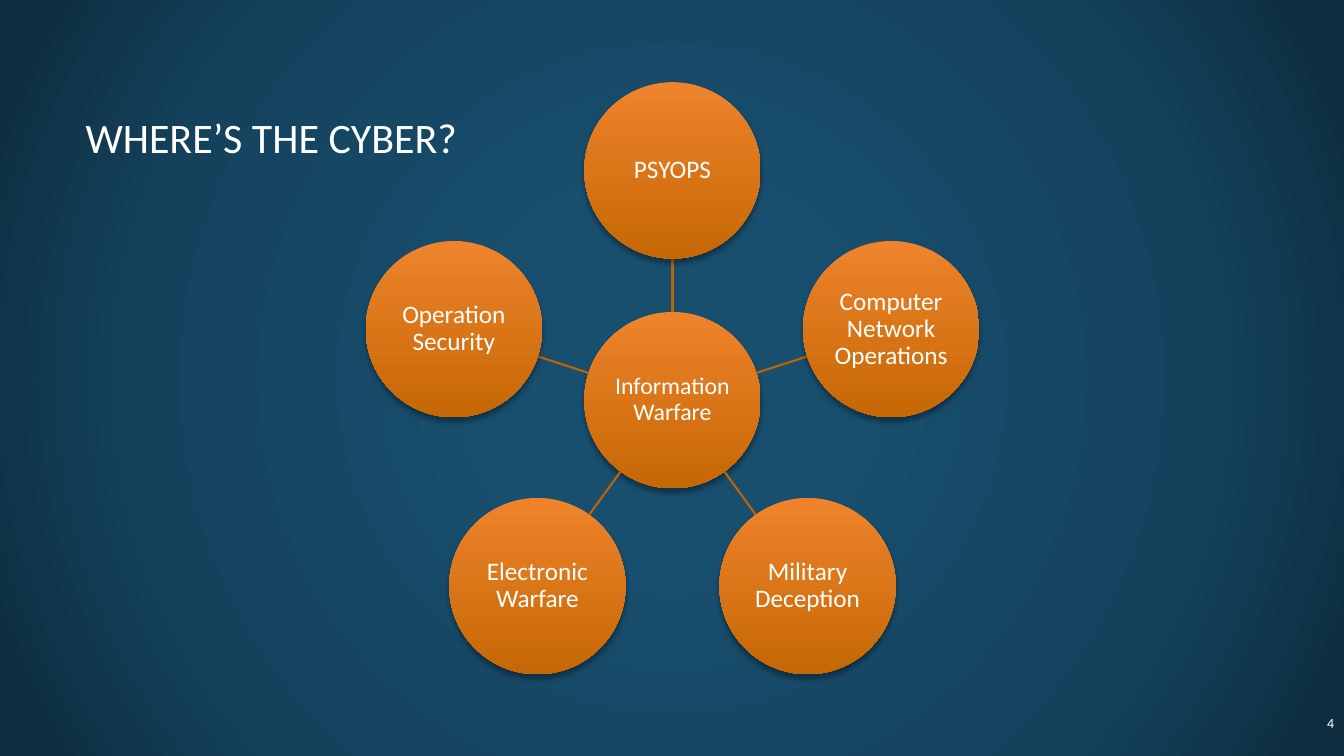
import math

import lxml.etree
import pptx
import pptx.dml.color
import pptx.enum.shapes
import pptx.enum.text
import pptx.oxml
import pptx.oxml.ns
import pptx.util
from pptx.dml.color import RGBColor
from pptx.enum.text import PP_ALIGN
from pptx.util import Inches

WHITE = RGBColor(0xFF, 0xFF, 0xFF)
BLACK = RGBColor(0x00, 0x00, 0x00)
ORANGE_LIGHT = RGBColor(0xEE, 0x83, 0x2B)
ORANGE_DARK = RGBColor(0xC6, 0x68, 0x05)
SPOKE_ORANGE = RGBColor(0xBE, 0x64, 0x04)
BLUE = RGBColor(0x18, 0x4E, 0x6E)
BLUE_MIDDLE = RGBColor(0x14, 0x42, 0x5D)
BLUE_DARK = RGBColor(0x0D, 0x2C, 0x3E)

FONT = "Calibri"
BACKGROUND_STOPS = [(0, BLUE), (23, BLUE), (69, BLUE_MIDDLE), (97, BLUE_DARK), (100, BLUE_DARK)]

HUB = "Information Warfare"
# Clockwise from the top
TOPICS = [
    "PSYOPS",
    "Computer Network Operations",
    "Military Deception",
    "Electronic Warfare",
    "Operation Security",
]
CENTER_X, CENTER_Y = 6.67, 3.97
ORBIT = 2.28
RADIUS = 0.875


def set_background(slide):
    """Fill the slide with a circular gradient spreading from its middle."""
    slide.background.fill.solid()
    solid_fill = slide.element.find(".//" + pptx.oxml.ns.qn("a:solidFill"))
    stops = "".join(
        f'<a:gs pos="{position * 1000}"><a:srgbClr val="{color}"/></a:gs>'
        for position, color in BACKGROUND_STOPS
    )
    gradient = pptx.oxml.parse_xml(
        f'<a:gradFill {pptx.oxml.ns.nsdecls("a")} rotWithShape="1"><a:gsLst>{stops}</a:gsLst>'
        '<a:path path="circle"><a:fillToRect l="50000" t="50000" r="50000" b="50000"/></a:path>'
        "</a:gradFill>"
    )
    solid_fill.getparent().replace(solid_fill, gradient)


def write_text(shape, text, size, align=PP_ALIGN.LEFT, margins=(0.1, 0.05), line_spacing=None):
    """Write one paragraph; margins are (horizontal, vertical) in inches."""
    frame = shape.text_frame
    frame.word_wrap = True
    frame.vertical_anchor = pptx.enum.text.MSO_ANCHOR.MIDDLE
    frame.margin_left = frame.margin_right = Inches(margins[0])
    frame.margin_top = frame.margin_bottom = Inches(margins[1])
    paragraph = frame.paragraphs[0]
    paragraph.text = text
    paragraph.alignment = align
    paragraph.line_spacing = line_spacing
    paragraph.font.name = FONT
    paragraph.font.size = pptx.util.Pt(size)
    paragraph.font.color.rgb = WHITE


def add_text(slide, left, top, width, height, text, **text_format):
    box = slide.shapes.add_textbox(Inches(left), Inches(top), Inches(width), Inches(height))
    write_text(box, text, **text_format)


def add_shadow(shape):
    shape.shadow.inherit = False
    effects = shape.element.spPr.find(pptx.oxml.ns.qn("a:effectLst"))
    effects.append(pptx.oxml.parse_xml(
        f'<a:outerShdw {pptx.oxml.ns.nsdecls("a")} blurRad="{pptx.util.Pt(4)}" '
        f'dist="{pptx.util.Pt(3)}" dir="5400000" rotWithShape="0">'
        f'<a:srgbClr val="{BLACK}"><a:alpha val="35000"/></a:srgbClr></a:outerShdw>'
    ))


def add_circle(slide, center, text, size):
    x, y = center
    circle = slide.shapes.add_shape(
        pptx.enum.shapes.MSO_SHAPE.OVAL,
        Inches(x - RADIUS), Inches(y - RADIUS), Inches(2 * RADIUS), Inches(2 * RADIUS),
    )
    circle.fill.gradient()
    circle.fill.gradient_angle = 270
    for stop, color, position in zip(
        circle.fill.gradient_stops, (ORANGE_LIGHT, ORANGE_DARK), (0, 1)
    ):
        stop.color.rgb = color
        stop.position = position
    circle.line.fill.background()
    add_shadow(circle)
    write_text(circle, text, size, PP_ALIGN.CENTER, margins=(0.01, 0.01), line_spacing=0.9)


def add_spoke(slide, start, end):
    spoke = slide.shapes.add_connector(
        pptx.enum.shapes.MSO_CONNECTOR.STRAIGHT, *(Inches(value) for value in (*start, *end))
    )
    spoke.line.color.rgb = SPOKE_ORANGE
    spoke.line.width = pptx.util.Pt(1.5)
    lxml.etree.SubElement(spoke.element.spPr, pptx.oxml.ns.qn("a:effectLst"))


def point_at(angle, distance):
    """Point at a clockwise angle from the top, measured from the hub's centre."""
    return CENTER_X + distance * math.sin(angle), CENTER_Y - distance * math.cos(angle)


def add_wheel(slide):
    add_circle(slide, (CENTER_X, CENTER_Y), HUB, size=17)
    for index, topic in enumerate(TOPICS):
        angle = index * math.tau / len(TOPICS)
        add_spoke(slide, point_at(angle, RADIUS), point_at(angle, ORBIT - RADIUS))
        add_circle(slide, point_at(angle, ORBIT), topic, size=18)


def main():
    presentation = pptx.Presentation()
    presentation.slide_width = Inches(13.33)
    presentation.slide_height = Inches(7.5)
    slide = presentation.slides.add_slide(presentation.slide_layouts[6])
    set_background(slide)
    add_text(slide, 0.75, 0.67, 11.86, 1.38, "WHERE’S THE CYBER?", size=30)
    add_wheel(slide)
    add_text(slide, 11.95, 6.97, 1.38, 0.41, "4", size=10, align=PP_ALIGN.RIGHT)
    presentation.save("out.pptx")


if __name__ == "__main__":
    main()
